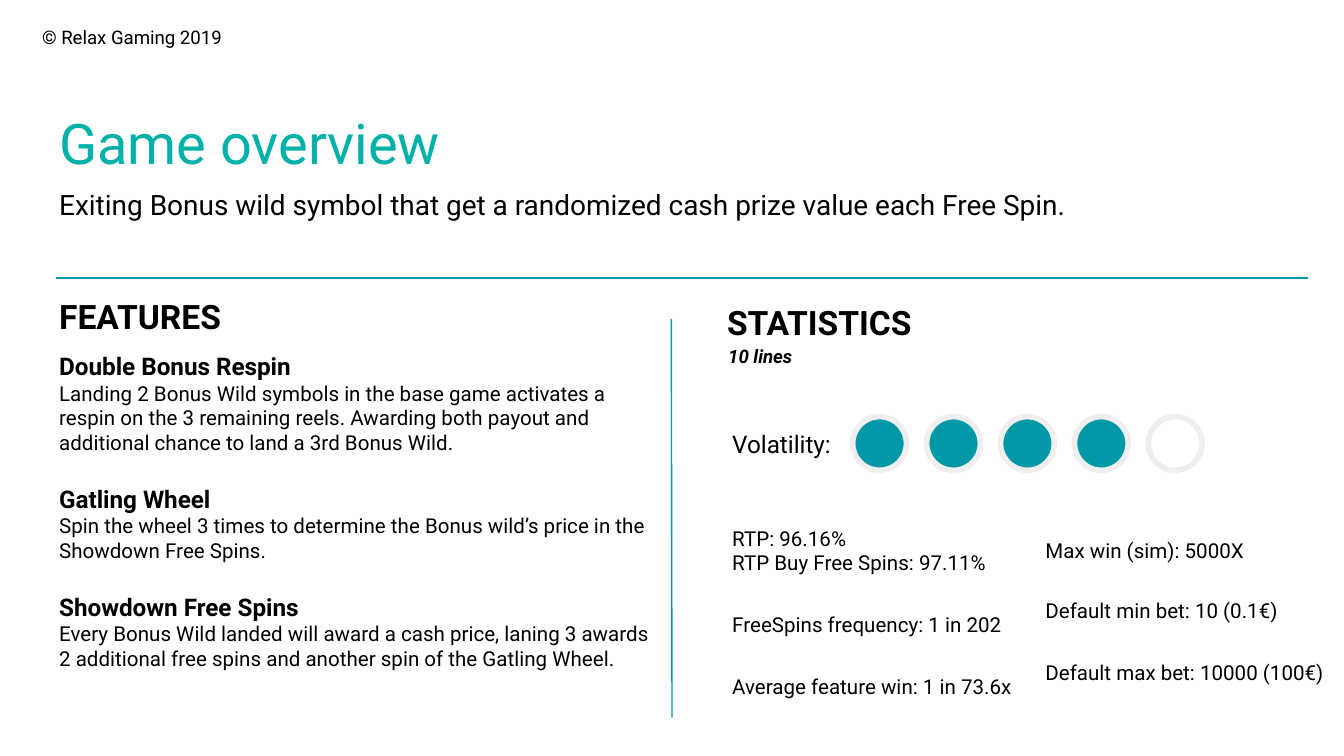
from pptx import Presentation
from pptx.dml.color import RGBColor
from pptx.enum.shapes import MSO_CONNECTOR as Connector, MSO_SHAPE as Shape
from pptx.enum.text import MSO_ANCHOR as Anchor, MSO_AUTO_SIZE as AutoSize, PP_ALIGN as Align
from pptx.oxml.ns import qn
from pptx.util import Pt
from lxml import etree

PX = 4572  # 200 px to the inch
INSET = 20
TEAL, TITLE_TEAL, PALE, BLACK, WHITE = "0097A7", "00B1A9", "EFEFEF", "000000", "FFFFFF"


def color(value):
    return RGBColor.from_string(value)


def write(box, area, lines, size, bold=False, italic=False, ink=BLACK, anchor=Anchor.MIDDLE):
    box.left, box.top, box.width, box.height = (n * PX for n in area)
    frame = box.text_frame
    frame.text = "\n".join(lines)
    frame.word_wrap = True
    frame.auto_size = AutoSize.NONE
    frame.vertical_anchor = anchor
    frame.margin_left = frame.margin_right = INSET * PX
    frame.margin_top = frame.margin_bottom = INSET * PX
    for para in frame.paragraphs:
        props = para._p.get_or_add_pPr()
        props.set("marL", "0")
        props.set("indent", "0")
        etree.SubElement(props, qn("a:buNone"))
        para.alignment = Align.LEFT
        para.space_before = Pt(0)
        for span in para.runs:
            font = span.font
            font.name, font.size, font.bold, font.italic = "Roboto", Pt(size), bold, italic
            font.color.rgb = color(ink)
    return frame


deck = Presentation()
deck.slide_width, deck.slide_height = 2000 * PX, 1125 * PX
page = deck.slides.add_slide(deck.slide_layouts.get_by_name("Comparison"))
shapes = page.shapes
title, features_head, features, statistics_head, subtitle = list(page.placeholders)[:5]
for spare in list(page.placeholders)[5:]:
    spare.element.getparent().remove(spare.element)

# Title, subtitle and section headings
write(title, (68, 148, 1864, 126), ["Game overview"], 30, ink=TITLE_TEAL)
write(subtitle, (68, 229, 1886, 150),
      ["Exiting Bonus wild symbol that get a randomized cash prize value each Free Spin."], 15)
write(features_head, (68, 429, 932, 82), ["FEATURES"], 18, bold=True)
write(statistics_head, (1062, 438, 932, 82), ["STATISTICS"], 18, bold=True)

# Features: bold names, each followed by its description
feature_lines = [
    "Double Bonus Respin",
    "Landing 2 Bonus Wild symbols in the base game activates a respin on the 3 remaining reels. "
    "Awarding both payout and additional chance to land a 3rd Bonus Wild.",
    "Gatling Wheel",
    "Spin the wheel 3 times to determine the Bonus wild’s price in the Showdown Free Spins.",
    "Showdown Free Spins",
    "Every Bonus Wild landed will award a cash price, laning 3 awards 2 additional free spins "
    "and another spin of the Gatling Wheel.",
]
frame = write(features, (68, 503, 924, 620), feature_lines, 11, anchor=Anchor.TOP)
for number, para in enumerate(frame.paragraphs[::2]):
    para.space_before = Pt(15.8 if number else 0)
    para.runs[0].font.size = Pt(13)
    para.runs[0].font.bold = True

# Copyright line and statistics labels
write(shapes.add_textbox(0, 0, 0, 0), (43, 18, 568, 194), ["© Relax Gaming 2019"], 10,
      anchor=Anchor.TOP)
write(shapes.add_textbox(0, 0, 0, 0), (1064, 489, 500, 82), ["10 lines"], 10,
      bold=True, italic=True)
write(shapes.add_textbox(0, 0, 0, 0), (1070, 620, 332, 82), ["Volatility:"], 13)

# Statistics in two columns
statistics = [
    (1070, 778, 500, ["RTP: 96.16%", "RTP Buy Free Spins: 97.11%"]),
    (1070, 888, 500, ["FreeSpins frequency: 1 in 202"]),
    (1070, 980, 500, ["Average feature win: 1 in 73.6x"]),
    (1536, 778, 464, ["Max win (sim): 5000X"]),
    (1536, 867, 464, ["Default min bet: 10 (0.1€)"]),
    (1536, 960, 464, ["Default max bet: 10000 (100€)"]),
]
for left, top, width, lines in statistics:
    write(shapes.add_textbox(0, 0, 0, 0), (left, top, width, 82), lines, 11)

# Divider lines
for ends in [(84, 414, 1947, 414), (999, 475, 1000, 1068)]:
    divider = shapes.add_connector(Connector.STRAIGHT, *(n * PX for n in ends))
    divider.line.color.rgb = color(TEAL)
    divider.line.width = Pt(0.75)
    etree.SubElement(divider.element.spPr, qn("a:effectLst"))

# Volatility rating: four of five dots filled
for number in range(5):
    dot = shapes.add_shape(Shape.OVAL, (1269 + 110 * number) * PX, 620 * PX, 80 * PX, 80 * PX)
    dot.shadow.inherit = False
    dot.fill.solid()
    dot.fill.fore_color.rgb = color(TEAL if number < 4 else WHITE)
    dot.line.color.rgb = color(PALE)
    dot.line.width = Pt(3)

deck.save("out.pptx")
